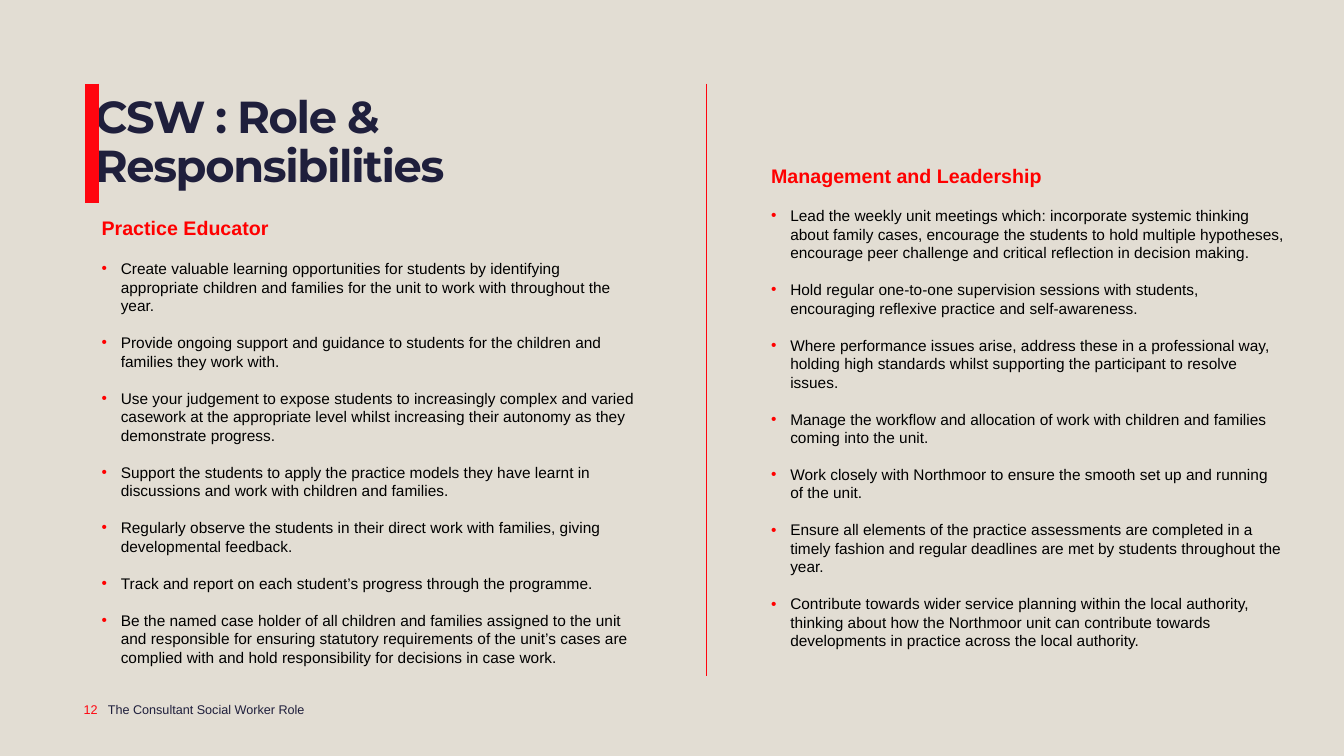
from lxml import etree
from pptx import Presentation
from pptx.dml.color import RGBColor
from pptx.enum.shapes import MSO_CONNECTOR
from pptx.enum.text import MSO_ANCHOR, MSO_AUTO_SIZE, PP_ALIGN
from pptx.oxml.ns import qn
from pptx.util import Inches, Pt

STRAIGHT = MSO_CONNECTOR.STRAIGHT
BOTTOM, MIDDLE = MSO_ANCHOR.BOTTOM, MSO_ANCHOR.MIDDLE
GROW, FIXED = MSO_AUTO_SIZE.SHAPE_TO_FIT_TEXT, MSO_AUTO_SIZE.NONE
LEFT = PP_ALIGN.LEFT

COLORS = {"back": "E2DDD3", "navy": "1F1F3C", "rule": "FF050F",
          "red": "FF0000", "black": "000000"}
COLORS_RGB = {name: RGBColor.from_string(code) for name, code in COLORS.items()}
TOP, FOOT = 0.83, 6.71
INDENT = Inches(0.19)
LINE = 1.2  # line pitch as a multiple of the type size

# left, top, width, height, gap under heading, heading, bullets
COLUMNS = [
    (0.91, 2.09, 5.56, 4.46, 14.4, "Practice Educator", [
        "Create valuable learning opportunities for students by identifying appropriate "
        "children and families for the unit to work with throughout the year.",
        "Provide ongoing support and guidance to students for the children and families "
        "they work with.",
        "Use your judgement to expose students to increasingly complex and varied casework "
        "at the appropriate level whilst increasing their autonomy as they demonstrate progress.",
        "Support the students to apply the practice models they have learnt in discussions "
        "and work with children and families.",
        "Regularly observe the students in their direct work with families, giving "
        "developmental feedback.",
        "Track and report on each student’s progress through the programme.",
        "Be the named case holder of all children and families assigned to the unit and "
        "responsible for ensuring statutory requirements of the unit’s cases are complied "
        "with and hold responsibility for decisions in case work.",
    ]),
    (7.55, 1.58, 5.3, 4.96, 13.2, "Management and Leadership", [
        "Lead the weekly unit meetings which: incorporate systemic thinking about family "
        "cases, encourage the students to hold multiple hypotheses, encourage peer challenge "
        "and critical reflection in decision making.",
        "Hold regular one-to-one supervision sessions with students, encouraging reflexive "
        "practice and self-awareness.",
        "Where performance issues arise, address these in a professional way, holding high "
        "standards whilst supporting the participant to resolve issues.",
        "Manage the workflow and allocation of work with children and families coming into "
        "the unit.",
        "Work closely with Northmoor to ensure the smooth set up and running of the unit.",
        "Ensure all elements of the practice assessments are completed in a timely fashion "
        "and regular deadlines are met by students throughout the year.",
        "Contribute towards wider service planning within the local authority, thinking about "
        "how the Northmoor unit can contribute towards developments in practice across the "
        "local authority.",
    ]),
]


def set_font(p, size, color, bold=False, name="Arial"):
    p.font.name, p.font.size, p.font.bold = name, Pt(size), bold
    p.font.color.rgb = COLORS_RGB[color]


def add_bullet(p):
    pPr = p._p.get_or_add_pPr()
    pPr.set("marL", str(INDENT))
    pPr.set("indent", str(-INDENT))
    color = etree.Element(qn("a:buClr"))
    etree.SubElement(color, qn("a:srgbClr"), val=COLORS["red"])
    font = etree.Element(qn("a:buFont"), typeface="Arial")
    char = etree.Element(qn("a:buChar"), char="•")
    defaults = pPr.find(qn("a:defRPr"))
    for element in (color, font, char):
        defaults.addprevious(element)


prs = Presentation()
prs.slide_width, prs.slide_height = Inches(13.33), Inches(7.5)
s = prs.slides.add_slide(prs.slide_layouts[5])
s.background.fill.solid()
s.background.fill.fore_color.rgb = COLORS_RGB["back"]

# Title
title = s.shapes.title
title.left, title.top = Inches(0.94), Inches(TOP)
title.width, title.height = Inches(5.45), Inches(1.19)
tf = title.text_frame
tf.margin_left = tf.margin_top = tf.margin_right = tf.margin_bottom = 0
tf.word_wrap, tf.auto_size, tf.vertical_anchor = True, FIXED, MIDDLE
p = tf.paragraphs[0]
r = p.add_run()
r.text = "CSW : Role & Responsibilities"
r.font._element.set("spc", "-100")
p.alignment, p.line_spacing = LEFT, 0.9
set_font(p, 32, "navy", True, "Montserrat")

# Footer and page number
for left, width, text, color in [
    (1.07, 4.5, "The Consultant Social Worker Role", "navy"),
    (0.83, 0.22, "12", "rule"),
]:
    sp = s.shapes.add_textbox(Inches(left), Inches(FOOT), Inches(width), Inches(0.4))
    tf = sp.text_frame
    tf.margin_left = tf.margin_top = tf.margin_right = tf.margin_bottom = 0
    tf.word_wrap, tf.vertical_anchor = True, BOTTOM
    p = tf.paragraphs[0]
    p.text = text
    set_font(p, 9, color)

# Title bar and column divider
for x, bottom, weight in [(0.91, 2.01, 10), (7.01, FOOT, 1)]:
    rule = s.shapes.add_connector(STRAIGHT, Inches(x), Inches(TOP), Inches(x), Inches(bottom))
    rule.line.color.rgb = COLORS_RGB["rule"]
    rule.line.width = Pt(weight)
    etree.SubElement(rule._element.spPr, qn("a:effectLst"))

# Text columns
for left, top, width, height, gap, heading, bullets in COLUMNS:
    sp = s.shapes.add_textbox(Inches(left), Inches(top), Inches(width), Inches(height))
    tf = sp.text_frame
    tf.word_wrap, tf.auto_size = True, GROW
    p = tf.paragraphs[0]
    p.text = heading
    p.line_spacing = Pt(14 * LINE)
    set_font(p, 14, "red", True)
    for i, bullet in enumerate(bullets):
        p = tf.add_paragraph()
        p.text = bullet
        p.line_spacing = Pt(11 * LINE)
        p.space_before = Pt(11 * LINE if i else gap)
        set_font(p, 11, "black")
        add_bullet(p)

prs.save("out.pptx")
